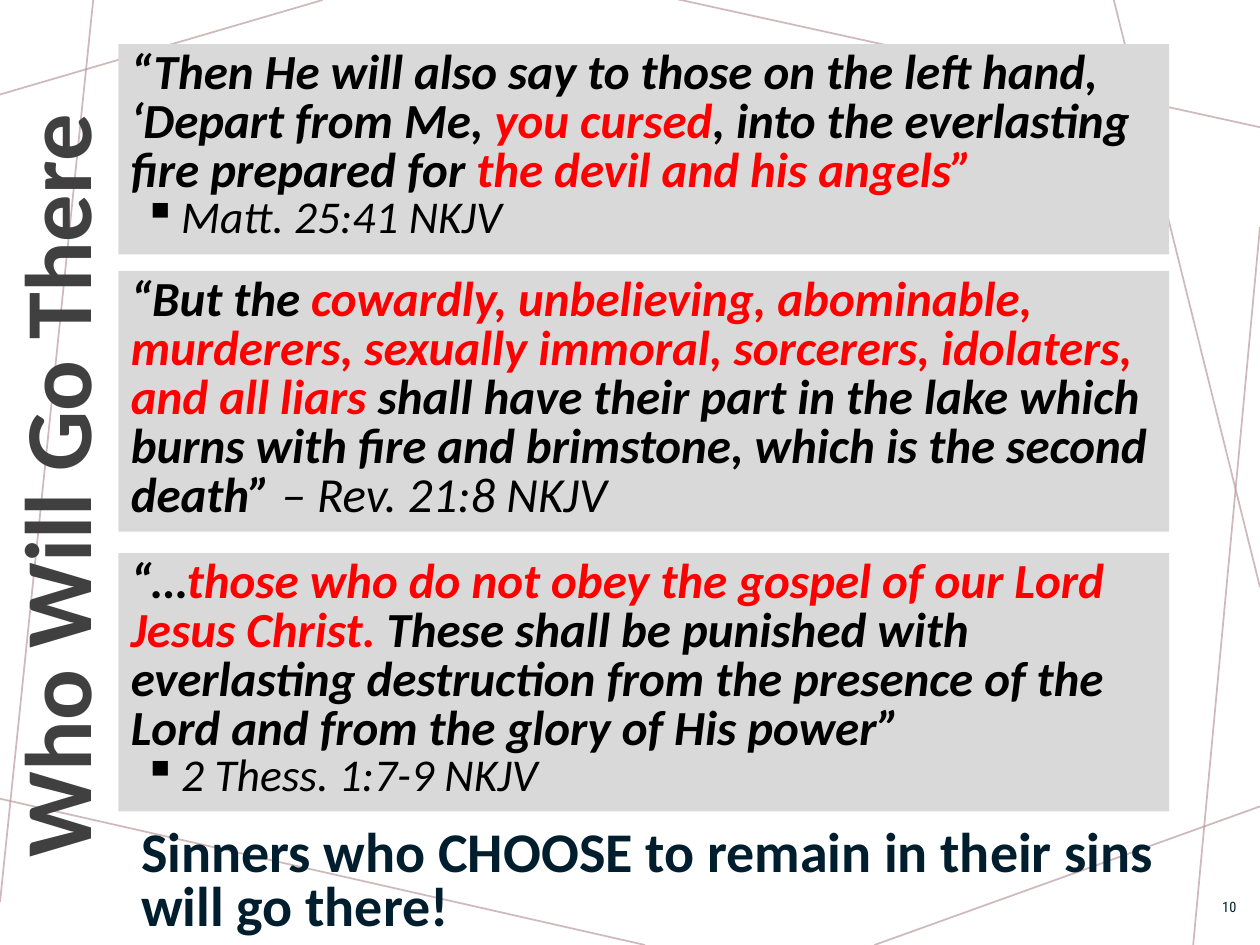
from lxml import etree
from pptx import Presentation
from pptx.dml.color import RGBColor
from pptx.enum.shapes import MSO_CONNECTOR, MSO_SHAPE
from pptx.enum.text import MSO_ANCHOR, MSO_AUTO_SIZE, PP_ALIGN
from pptx.oxml.ns import qn
from pptx.util import Inches, Pt

STRAIGHT = MSO_CONNECTOR.STRAIGHT
RECTANGLE = MSO_SHAPE.RECTANGLE
TOP, MIDDLE = MSO_ANCHOR.TOP, MSO_ANCHOR.MIDDLE
NO_AUTOSIZE = MSO_AUTO_SIZE.NONE
LEFT, CENTER, RIGHT = PP_ALIGN.LEFT, PP_ALIGN.CENTER, PP_ALIGN.RIGHT

BLACK = RGBColor(0x00, 0x00, 0x00)
RED = RGBColor(0xFF, 0x00, 0x00)
NAVY = RGBColor(0x00, 0x1E, 0x2E)
CHARCOAL = RGBColor(0x40, 0x40, 0x40)
PANEL_GRAY = RGBColor(0xD9, 0xD9, 0xD9)
MAUVE = RGBColor(0xBA, 0x9C, 0xA0)

BODY_FONT = "Calibri"
NUMBER_FONT = "Roboto Condensed"

BACKGROUND_LINES = [
    (2.56, 0, 0, 0.75),
    (0.74, 0, 0, 7.16),
    (5.12, 7.5, -0.04, 6.33),
    (10, 6.4, 6.94, 7.5),
    (10, 1.8, 9.47, 7.5),
    (10, 4.66, 8.84, 0),
    (10, 1.01, 5.36, -0.01),
]

QUOTES = [
    (0.35, 1.67, [
        ("“Then He will also say to those on the left hand, ‘Depart from Me, ", BLACK, True),
        ("you cursed", RED, True),
        (", into the everlasting fire prepared for ", BLACK, True),
        ("the devil and his angels”", RED, True),
    ], "Matt. 25:41 NKJV"),
    (2.15, 2.07, [
        ("“But the ", BLACK, True),
        ("cowardly, unbelieving, abominable, murderers, sexually immoral, "
         "sorcerers, idolaters, and all liars ", RED, True),
        ("shall have their part in the lake which burns with fire and brimstone, "
         "which is the second death” ", BLACK, True),
        ("– Rev. 21:8 NKJV", BLACK, False),
    ], None),
    (4.39, 2.05, [
        ("“…", BLACK, True),
        ("those who do not obey the gospel of our Lord Jesus Christ.", RED, True),
        (" These shall be punished with everlasting destruction from the presence "
         "of the Lord and from the glory of His power”", BLACK, True),
    ], "2 Thess. 1:7-9 NKJV"),
]


def place(shape, left, top, width, height):
    shape.left, shape.top = Inches(left), Inches(top)
    shape.width, shape.height = Inches(width), Inches(height)


def bring_to_front(shape):
    shape.element.getparent().append(shape.element)


def add_run(paragraph, text, size, color, bold=False, italic=False, font=BODY_FONT):
    run = paragraph.add_run()
    run.text = text
    run.font.name = font
    run.font.size = Pt(size)
    run.font.bold = bold
    run.font.italic = italic
    run.font.color.rgb = color


def set_bullet(paragraph, character=None, margin=0, indent=0):
    properties = paragraph._p.get_or_add_pPr()
    properties.set("marL", str(Inches(margin)))
    properties.set("indent", str(Inches(indent)))
    if character:
        etree.SubElement(properties, qn("a:buChar")).set("char", character)
    else:
        etree.SubElement(properties, qn("a:buNone"))


def set_spacing(paragraph, line_points):
    paragraph.alignment = LEFT
    paragraph.line_spacing = Pt(line_points)
    paragraph.space_before = Pt(0)


def add_background_line(slide, start_x, start_y, end_x, end_y):
    line = slide.shapes.add_connector(
        STRAIGHT, Inches(start_x), Inches(start_y), Inches(end_x), Inches(end_y))
    line.line.color.rgb = MAUVE
    line.line.width = Pt(1)
    color = line.element.spPr.find(".//" + qn("a:srgbClr"))
    etree.SubElement(color, qn("a:alpha")).set("val", "70000")
    etree.SubElement(line.element.spPr, qn("a:effectLst"))


def format_title(title):
    bring_to_front(title)
    place(title, -2.71, 3.35, 6.28, 1.01)
    title.rotation = 270
    frame = title.text_frame
    frame.auto_size = NO_AUTOSIZE
    frame.word_wrap = False
    paragraph = frame.paragraphs[0]
    paragraph.alignment = CENTER
    add_run(paragraph, "Who Will Go There", 54, CHARCOAL, bold=True)


def format_conclusion(body):
    bring_to_front(body)
    place(body, 1.02, 6.53, 8.82, 0.94)
    frame = body.text_frame
    frame.auto_size = NO_AUTOSIZE
    frame.vertical_anchor = TOP
    paragraph = frame.paragraphs[0]
    set_bullet(paragraph)
    set_spacing(paragraph, 31)
    add_run(paragraph, "Sinners who CHOOSE to remain in their sins will go there!",
            32, NAVY, bold=True)


def add_quote(slide, top, height, runs, reference):
    panel = slide.shapes.add_shape(
        RECTANGLE, Inches(0.94), Inches(top), Inches(8.34), Inches(height))
    panel.shadow.inherit = False
    panel.fill.solid()
    panel.fill.fore_color.rgb = PANEL_GRAY
    panel.line.fill.background()
    frame = panel.text_frame
    frame.word_wrap = True
    frame.vertical_anchor = TOP
    paragraph = frame.paragraphs[0]
    set_spacing(paragraph, 28)
    for text, color, bold in runs:
        add_run(paragraph, text, 28, color, bold, italic=True)
    if reference:
        paragraph = frame.add_paragraph()
        set_bullet(paragraph, "▪", 0.4, -0.3)
        set_spacing(paragraph, 26)
        add_run(paragraph, reference, 26, BLACK, italic=True)


def add_slide_number(slide):
    box = slide.shapes.add_textbox(Inches(9.52), Inches(7), Inches(0.39), Inches(0.4))
    frame = box.text_frame
    frame.word_wrap = True
    frame.vertical_anchor = MIDDLE
    paragraph = frame.paragraphs[0]
    paragraph.alignment = RIGHT
    add_run(paragraph, "10", 8.2, NAVY, font=NUMBER_FONT)


def main():
    presentation = Presentation()
    presentation.slide_width = Inches(10)
    presentation.slide_height = Inches(7.5)
    slide = presentation.slides.add_slide(presentation.slide_layouts[1])
    for line in BACKGROUND_LINES:
        add_background_line(slide, *line)
    format_conclusion(slide.placeholders[1])
    format_title(slide.shapes.title)
    for quote in QUOTES:
        add_quote(slide, *quote)
    add_slide_number(slide)
    presentation.save("out.pptx")


if __name__ == "__main__":
    main()
